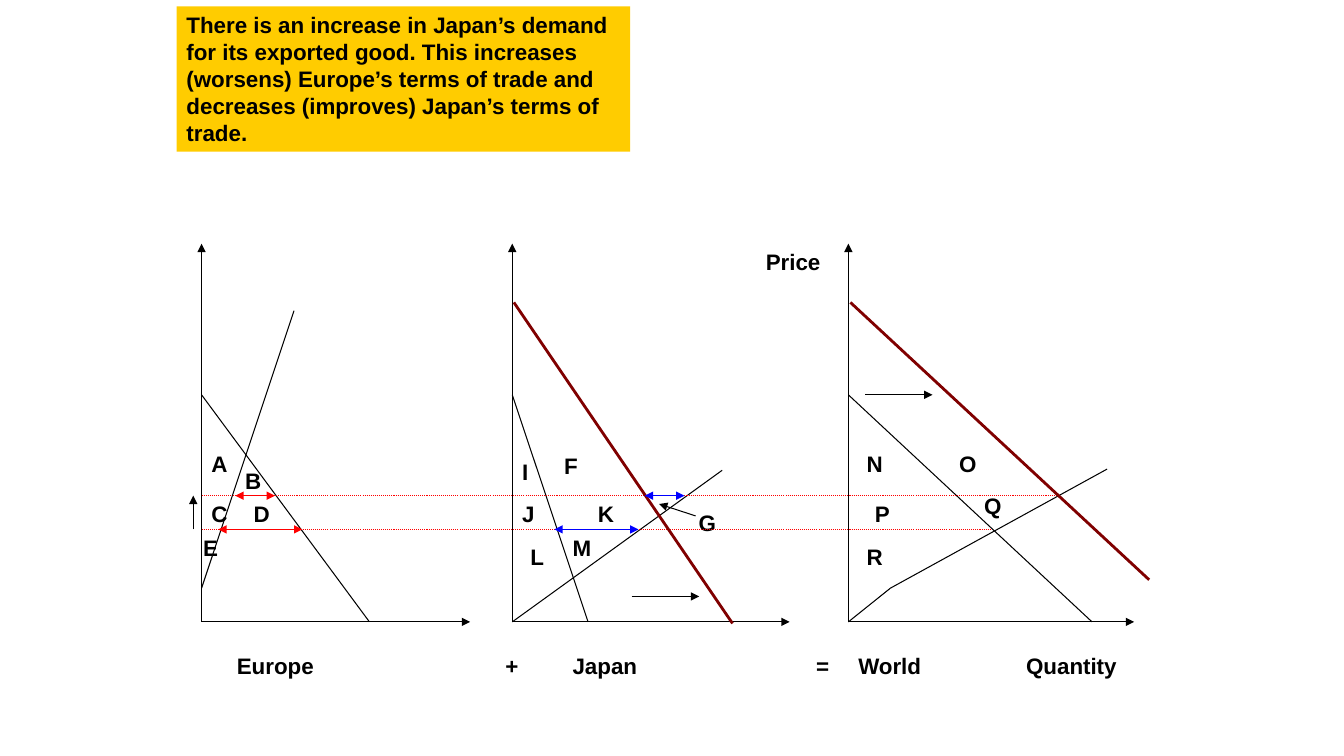
from dataclasses import dataclass

from lxml.etree import SubElement
from pptx import Presentation
from pptx.dml.color import RGBColor
from pptx.enum.dml import MSO_LINE
from pptx.enum.shapes import MSO_CONNECTOR, MSO_SHAPE
from pptx.enum.text import MSO_ANCHOR, PP_ALIGN
from pptx.oxml.ns import qn
from pptx.slide import Slide
from pptx.text.text import TextFrame
from pptx.util import Cm, Pt

BLACK, RED, BLUE, MAROON, GOLD = "000000", "FF0000", "0000FF", "800000", "FFCC00"

EUROPE, JAPAN, WORLD = 5.08, 12.91, 21.38
AXIS_TOP, BASE = 6.14, 15.67
OLD_PRICE, NEW_PRICE = 13.34, 12.49
OLD_CHOKE, NEW_CHOKE = 9.95, 7.62
CAPTION_TOP = 16.3
LABEL_HEIGHT = 0.93


@dataclass(frozen=True)
class Label:
    text: str
    left: float
    top: float
    width: float = 0.85


@dataclass(frozen=True)
class Segment:
    x1: float
    y1: float
    x2: float
    y2: float
    color: str = BLACK
    weight: float = 0.75
    dotted: bool = False
    heads: tuple[str, ...] = ()


def axis_pair(origin: float, right: float) -> list[Segment]:
    return [
        Segment(origin, BASE, origin, AXIS_TOP, heads=("tailEnd",)),
        Segment(origin, BASE, right, BASE, heads=("tailEnd",)),
    ]


def price_line(price: float, right: float) -> Segment:
    return Segment(EUROPE, price, right, price, RED, dotted=True)


def trade_volume(left: float, right: float, price: float, color: str) -> Segment:
    return Segment(left, price, right, price, color, 1, heads=("headEnd", "tailEnd"))


def shift_arrow(x1: float, y1: float, x2: float, y2: float) -> Segment:
    return Segment(x1, y1, x2, y2, heads=("tailEnd",))


AREAS = [
    Label("A", 5.08, 11.22),
    Label("B", 5.93, 11.64),
    Label("C", 5.08, 12.49),
    Label("D", 6.14, 12.49),
    Label("E", 4.87, 13.34),
    Label("F", 13.97, 11.28, 1.06),
    Label("I", 12.91, 11.43),
    Label("J", 12.91, 12.49),
    Label("K", 14.82, 12.49),
    Label("L", 13.12, 13.55),
    Label("M", 14.18, 13.34, 1.48),
    Label("N", 21.59, 11.22, 1.06),
    Label("O", 23.92, 11.22, 1.06),
    Label("P", 21.8, 12.49, 1.06),
    Label("Q", 24.55, 12.28, 1.06),
    Label("R", 21.59, 13.55, 1.06),
    Label("G", 17.36, 12.7),
]

CAPTIONS = [
    Label("Europe", 5.72, CAPTION_TOP, 2.54),
    Label("+", 12.49, CAPTION_TOP),
    Label("Japan", 14.18, CAPTION_TOP, 2.54),
    Label("=", 20.32, CAPTION_TOP),
    Label("World", 21.38, CAPTION_TOP, 2.54),
    Label("Quantity", 25.61, CAPTION_TOP, 3.39),
    Label("Price", 19.05, AXIS_TOP, 2.12),
]

SEGMENTS = [
    shift_arrow(17.53, 13, 16.61, 12.7),
    Segment(EUROPE, OLD_CHOKE, 9.31, BASE),
    Segment(JAPAN, OLD_CHOKE, 14.82, BASE),
    Segment(WORLD, OLD_CHOKE, 27.52, BASE),
    Segment(EUROPE, 14.82, 7.41, 7.83),
    Segment(JAPAN, BASE, 18.2, 11.85),
    price_line(OLD_PRICE, 24.98),
    *axis_pair(EUROPE, 11.85),
    *axis_pair(JAPAN, 19.9),
    *axis_pair(WORLD, 28.58),
    trade_volume(5.5, 7.62, OLD_PRICE, RED),
    trade_volume(13.97, 16.09, OLD_PRICE, BLUE),
    Segment(WORLD, BASE, 22.44, 14.82),
    Segment(22.44, 14.82, 27.9, 11.82),
    price_line(NEW_PRICE, 26.62),
    Segment(21.43, NEW_CHOKE, 28.96, 14.61, MAROON, 2),
    Segment(12.95, NEW_CHOKE, 18.46, 15.71, MAROON, 2),
    shift_arrow(15.92, 15.03, 17.62, 15.03),
    shift_arrow(21.8, OLD_CHOKE, 23.5, OLD_CHOKE),
    shift_arrow(4.87, OLD_PRICE, 4.87, NEW_PRICE),
    trade_volume(5.93, 6.93, NEW_PRICE, RED),
    trade_volume(16.25, 17.25, NEW_PRICE, BLUE),
]

EXPLANATION = (
    "There is an increase in Japan’s demand for its exported good. "
    "This increases (worsens) Europe’s terms of trade and decreases "
    "(improves) Japan’s terms of trade."
)


def rgb(color: str) -> RGBColor:
    return RGBColor.from_string(color)


def write(frame: TextFrame, text: str) -> None:
    frame.word_wrap = True
    frame.vertical_anchor = MSO_ANCHOR.TOP
    frame.text = text
    paragraph = frame.paragraphs[0]
    paragraph.alignment = PP_ALIGN.LEFT
    font = paragraph.runs[0].font
    font.name = "Arial"
    font.size = Pt(16)
    font.bold = True
    font.color.rgb = rgb(BLACK)


def draw_label(slide: Slide, label: Label) -> None:
    box = slide.shapes.add_textbox(
        Cm(label.left), Cm(label.top), Cm(label.width), Cm(LABEL_HEIGHT)
    )
    write(box.text_frame, label.text)


def draw_segment(slide: Slide, segment: Segment) -> None:
    connector = slide.shapes.add_connector(
        MSO_CONNECTOR.STRAIGHT,
        Cm(segment.x1), Cm(segment.y1), Cm(segment.x2), Cm(segment.y2),
    )
    line = connector.line
    line.color.rgb = rgb(segment.color)
    line.width = Pt(segment.weight)
    if segment.dotted:
        line.dash_style = MSO_LINE.ROUND_DOT
    properties = connector._element.spPr
    outline = properties.find(qn("a:ln"))
    for head in segment.heads:
        SubElement(outline, qn(f"a:{head}"), type="triangle")
    SubElement(properties, qn("a:effectLst"))


def draw_explanation(slide: Slide) -> None:
    panel = slide.shapes.add_shape(
        MSO_SHAPE.RECTANGLE, Cm(4.45), Cm(0.16), Cm(11.43), Cm(3.66)
    )
    panel.shadow.inherit = False
    panel.fill.solid()
    panel.fill.fore_color.rgb = rgb(GOLD)
    panel.line.fill.background()
    write(panel.text_frame, EXPLANATION)


def main() -> None:
    presentation = Presentation()
    presentation.slide_width = Cm(33.87)
    presentation.slide_height = Cm(19.05)
    slide = presentation.slides.add_slide(presentation.slide_layouts[6])
    for label in AREAS + CAPTIONS:
        draw_label(slide, label)
    for segment in SEGMENTS:
        draw_segment(slide, segment)
    draw_explanation(slide)
    presentation.save("out.pptx")


if __name__ == "__main__":
    main()
